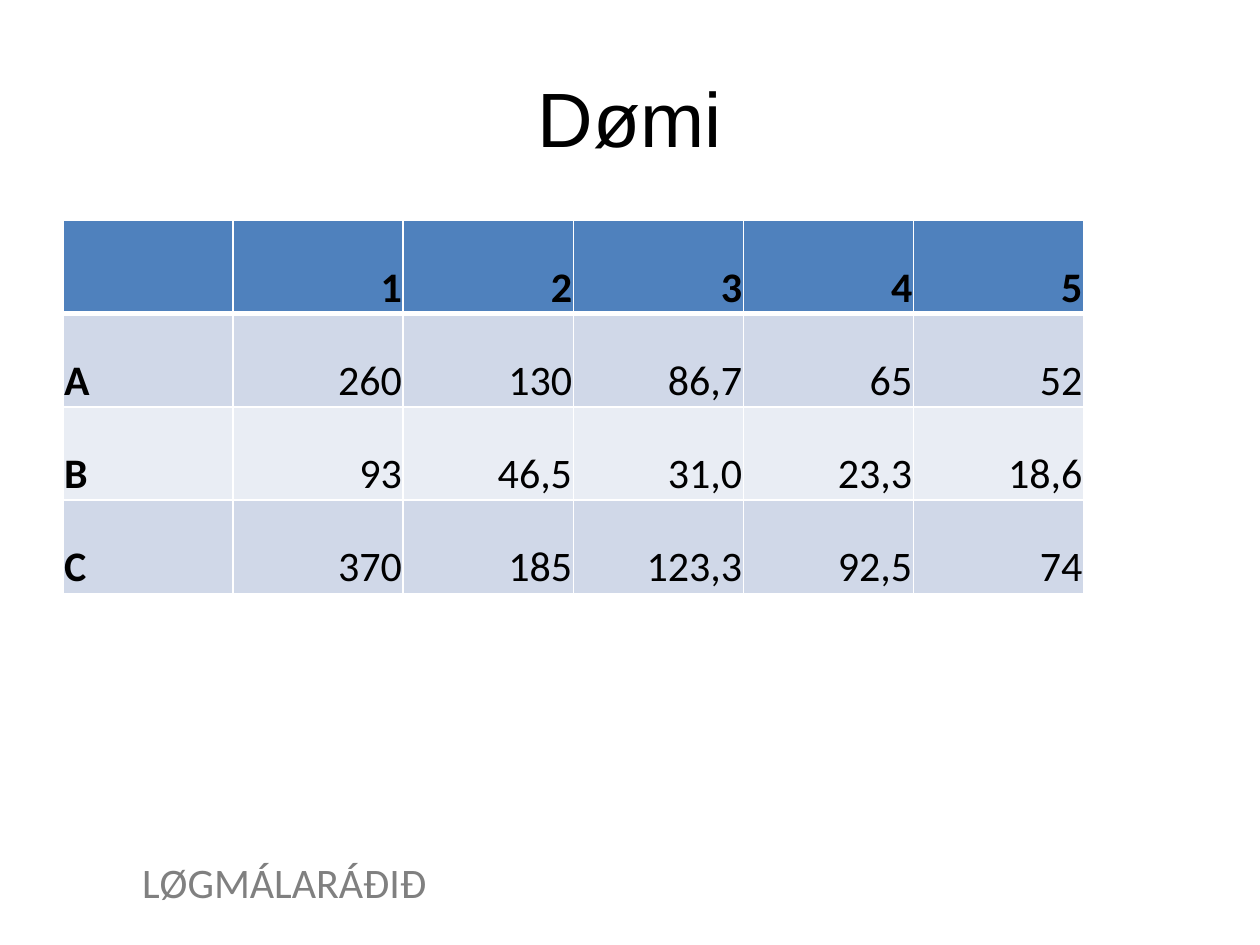
from lxml.etree import SubElement
from pptx import Presentation
from pptx.dml.color import RGBColor
from pptx.enum.text import MSO_ANCHOR, PP_ALIGN
from pptx.oxml.ns import qn
from pptx.util import Inches, Pt

THEME = {
    "title": {"font": "Arial", "size": 44, "color": "000000"},
    "body": {"font": "Calibri", "size": 24, "color": "000000"},
    "footer": {"font": "Calibri", "size": 24, "color": "808080"},
    "header_fill": "4F81BD",
    "band_fills": ["D0D8E8", "E9EDF4"],
    "border": "FFFFFF",
}
COLUMN, ROW = Inches(1.35), Inches(0.74)
ROWS = [
    ["", "1", "2", "3", "4", "5"],
    ["A", "260", "130", "86,7", "65", "52"],
    ["B", "93", "46,5", "31,0", "23,3", "18,6"],
    ["C", "370", "185", "123,3", "92,5", "74"],
]


def write(text_frame, text, style, align=PP_ALIGN.LEFT, bold=False):
    paragraph = text_frame.paragraphs[0]
    paragraph.text = text
    paragraph.alignment = align
    paragraph.font.name = style["font"]
    paragraph.font.size = Pt(style["size"])
    paragraph.font.bold = bold
    paragraph.font.color.rgb = RGBColor.from_string(style["color"])


def add_border(cell, side, points):
    line = SubElement(cell._tc.get_or_add_tcPr(), qn(f"a:ln{side}"), w=str(Pt(points)))
    fill = SubElement(line, qn("a:solidFill"))
    SubElement(fill, qn("a:srgbClr"), val=THEME["border"])


presentation = Presentation()
presentation.slide_width, presentation.slide_height = Inches(10), Inches(7.5)
width, height = presentation.slide_width, presentation.slide_height
slide = presentation.slides.add_slide(presentation.slide_layouts[6])

# Footer
footer = slide.shapes.add_textbox(
    int(width * 0.103), int(height * 0.9), int(width * 0.5), Inches(0.5))
footer.text_frame.word_wrap = True
write(footer.text_frame, "LØGMÁLARÁÐIÐ", THEME["footer"])

# Title
title = slide.shapes.add_textbox(
    int(width * 0.05), int(height * 0.04), int(width * 0.9), Inches(1.25))
title.text_frame.word_wrap = True
title.text_frame.vertical_anchor = MSO_ANCHOR.MIDDLE
write(title.text_frame, "Dømi", THEME["title"], PP_ALIGN.CENTER)

# Table: each row's number divided by the column heading
table = slide.shapes.add_table(
    len(ROWS), len(ROWS[0]), int(width * 0.05), Inches(1.75),
    COLUMN * len(ROWS[0]), ROW * len(ROWS)).table
for column in table.columns:
    column.width = COLUMN
for row in table.rows:
    row.height = ROW

for row_index, values in enumerate(ROWS):
    is_header = row_index == 0
    fill_color = THEME["header_fill"] if is_header else THEME["band_fills"][(row_index - 1) % 2]
    for column_index, value in enumerate(values):
        is_label = column_index == 0
        cell = table.cell(row_index, column_index)
        cell.vertical_anchor = MSO_ANCHOR.BOTTOM
        cell.margin_left = cell.margin_right = cell.margin_top = Inches(0.01)
        cell.margin_bottom = 0
        for side in "LRTB":
            heavy = (is_header and side == "B") or (row_index == 1 and side == "T")
            add_border(cell, side, 3 if heavy else 1)
        cell.fill.solid()
        cell.fill.fore_color.rgb = RGBColor.from_string(fill_color)
        align = PP_ALIGN.LEFT if is_label else PP_ALIGN.RIGHT
        write(cell.text_frame, value, THEME["body"], align, is_header or is_label)

presentation.save("out.pptx")
